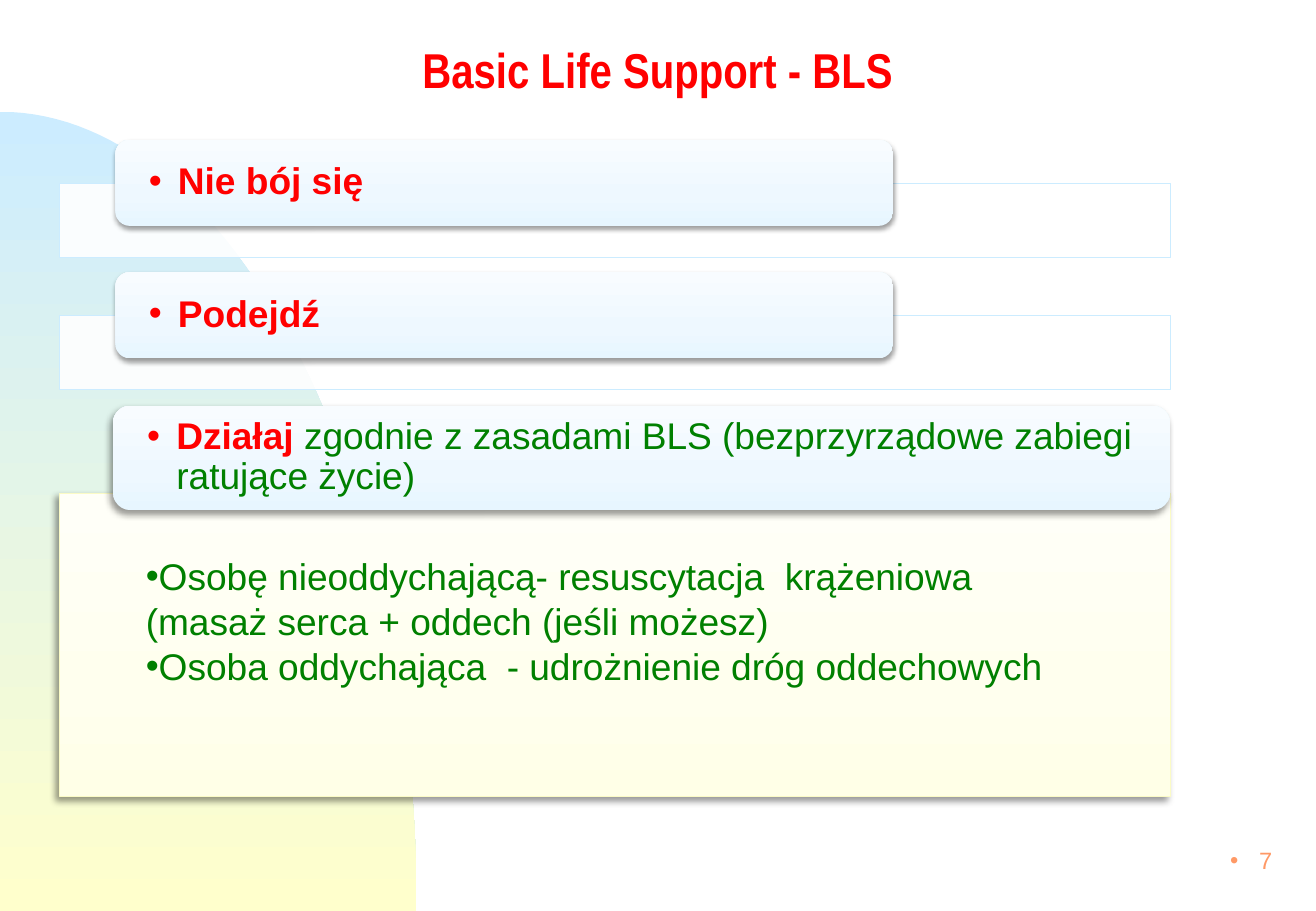
from dataclasses import dataclass

from pptx import Presentation
from pptx.dml.color import RGBColor
from pptx.enum.shapes import MSO_SHAPE as Shape
from pptx.enum.text import MSO_ANCHOR as Anchor, MSO_AUTO_SIZE as AutoSize, PP_ALIGN as Align
from pptx.oxml import parse_xml
from pptx.oxml.ns import nsdecls
from pptx.util import Inches, Pt


@dataclass(frozen=True)
class Theme:
    font: str = "Arial"
    title_font: str = "Arial Narrow"
    title_size: int = 29
    text_size: int = 22
    number_size: int = 14
    red: str = "FF0000"
    green: str = "008000"
    orange: str = "FF9966"
    white: str = "FFFFFF"
    sky: str = "CCECFF"
    panel_line: str = "FBFBC6"
    # Gradients: (position in percent, colour)
    arc_stops: tuple = ((0, "CCECFF"), (100, "FFFFCC"))
    card_stops: tuple = ((0, "E7F6FF"), (35, "EEF8FF"), (100, "F8FCFF"))
    panel_stops: tuple = ((0, "FFFFE7"), (35, "FFFFEE"), (100, "FFFFF8"))
    # Shadows: opacity in percent, blur, distance, angle
    soft_shadow: tuple = (38, 3.1, 1.6, 90)
    deep_shadow: tuple = (40, 4, 3, 135)


class SlideBuilder:
    def __init__(self, page, theme):
        self.page = page
        self.theme = theme

    # Styling
    def gradient(self, shape, stops, angle):
        shape.fill.solid()
        solid = shape._element.spPr.find("{*}solidFill")
        marks = "".join(f'<a:gs pos="{pos * 1000}"><a:srgbClr val="{color}"/></a:gs>'
                        for pos, color in stops)
        solid.getparent().replace(solid, parse_xml(
            f'<a:gradFill {nsdecls("a")} rotWithShape="1"><a:gsLst>{marks}</a:gsLst>'
            f'<a:lin ang="{angle * 60000}" scaled="0"/></a:gradFill>'))

    def outline(self, shape, color):
        shape.line.color.rgb = RGBColor.from_string(color)
        shape.line.width = Pt(0.75)

    def shadow(self, shape, opacity, blur, distance, angle):
        shape.shadow.inherit = False
        shape._element.spPr.find("{*}effectLst").append(parse_xml(
            f'<a:outerShdw {nsdecls("a")} blurRad="{Pt(blur)}" dist="{Pt(distance)}" '
            f'dir="{angle * 60000}" rotWithShape="0"><a:srgbClr val="000000">'
            f'<a:alpha val="{opacity * 1000}"/></a:srgbClr></a:outerShdw>'))

    def place(self, shape, left, top, width, height):
        shape.left, shape.top = Inches(left), Inches(top)
        shape.width, shape.height = Inches(width), Inches(height)

    # Text
    def frame(self, shape, margins, anchor):
        frame = shape.text_frame
        frame.auto_size = AutoSize.NONE
        frame.word_wrap = True
        frame.vertical_anchor = anchor
        (frame.margin_left, frame.margin_top,
         frame.margin_right, frame.margin_bottom) = map(Inches, margins)
        return frame

    def add_spans(self, para, spans, size, align=Align.LEFT, spacing=1.0, font=None):
        para.alignment = align
        para.line_spacing = spacing
        para.space_before = para.space_after = Pt(0)
        for text, color, bold in spans:
            span = para.add_run()
            span.text = text
            span.font.name = font or self.theme.font
            span.font.size = Pt(size)
            span.font.bold = bold
            span.font.color.rgb = RGBColor.from_string(color)

    def bullet(self, para, hang=0.0):
        props = para._p.get_or_add_pPr()
        props.set("marL", str(Inches(hang)))
        props.set("indent", str(-Inches(hang)))
        props.append(parse_xml(f'<a:buFont {nsdecls("a")} typeface="{self.theme.font}"/>'))
        props.append(parse_xml(f'<a:buChar {nsdecls("a")} char="•"/>'))

    # Elements
    def arc(self, left, top, width, height, steps=60):
        """Fill the area under a cubic curve from top left to bottom right."""
        def point(t):
            rest = 1 - t
            x = 3 * rest ** 2 * t * 0.55 + 3 * rest * t ** 2 + t ** 3
            y = 3 * rest * t ** 2 * 0.45 + t ** 3
            return Inches(left + width * x), Inches(top + height * y)

        points = [point(step / steps) for step in range(steps + 1)]
        points.append((Inches(left), Inches(top + height)))
        builder = self.page.shapes.build_freeform(*points[0])
        builder.add_line_segments(points[1:], close=True)
        shape = builder.convert_to_shape()
        self.gradient(shape, self.theme.arc_stops, 90)
        shape.line.fill.background()
        shape.shadow.inherit = False

    def title(self, text, *area):
        box = self.page.shapes.title
        self.place(box, *area)
        frame = self.frame(box, (0.1, 0.05, 0.1, 0.05), Anchor.MIDDLE)
        self.add_spans(frame.paragraphs[0], [(text, self.theme.red, True)],
                       self.theme.title_size, Align.CENTER, 0.7, self.theme.title_font)

    def strip(self, *area):
        box = self.page.shapes.add_shape(Shape.RECTANGLE, *map(Inches, area))
        box.fill.solid()
        box.fill.fore_color.rgb = RGBColor.from_string(self.theme.white)
        color = box._element.spPr.find("{*}solidFill")[0]
        color.append(parse_xml(f'<a:alpha {nsdecls("a")} val="90000"/>'))
        self.outline(box, self.theme.sky)
        box.shadow.inherit = False

    def card(self, spans, shadow, *area):
        box = self.page.shapes.add_shape(Shape.ROUNDED_RECTANGLE, *map(Inches, area))
        self.gradient(box, self.theme.card_stops, 270)
        box.line.fill.background()
        self.shadow(box, *shadow)
        para = self.frame(box, (0.24, 0, 0.24, 0), Anchor.MIDDLE).paragraphs[0]
        self.add_spans(para, spans, self.theme.text_size, spacing=0.9)
        self.bullet(para, 0.24)

    def panel(self, items, *area):
        box = self.page.placeholders[1]
        self.page.shapes._spTree.append(box._element)  # bring to the front
        self.place(box, *area)
        self.gradient(box, self.theme.panel_stops, 270)
        self.outline(box, self.theme.panel_line)
        self.shadow(box, *self.theme.deep_shadow)
        frame = self.frame(box, (0.71, 0.5, 0.71, 0.17), Anchor.TOP)
        for index, item in enumerate(items):
            para = frame.add_paragraph() if index else frame.paragraphs[0]
            self.add_spans(para, [(item, self.theme.green, False)], self.theme.text_size)
            self.bullet(para)

    def page_number(self, text, *area):
        box = self.page.shapes.add_textbox(*map(Inches, area))
        para = self.frame(box, (0.1, 0.05, 0.1, 0.05), Anchor.MIDDLE).paragraphs[0]
        self.add_spans(para, [(text, self.theme.orange, False)],
                       self.theme.number_size, Align.RIGHT)
        self.bullet(para, 0.24)


def main():
    deck = Presentation()
    deck.slide_width, deck.slide_height = Inches(10.83), Inches(7.5)
    theme = Theme()
    slide = SlideBuilder(deck.slides.add_slide(deck.slide_layouts[1]), theme)

    # Background and title
    slide.arc(0, 0.92, 3.43, 6.58)
    slide.title("Basic Life Support - BLS", 0.54, 0, 9.75, 1.25)

    # Short steps
    for row, step in enumerate(("Nie bój się", "Podejdź")):
        top = 1.15 + row * 1.09
        slide.strip(0.49, top + 0.36, 9.14, 0.61)
        slide.card([(step, theme.red, True)], theme.soft_shadow, 0.95, top, 6.4, 0.71)

    # Final step with its details
    slide.panel(("Osobę nieoddychającą- resuscytacja  krążeniowa "
                 "(masaż serca + oddech (jeśli możesz)",
                 "Osoba oddychająca  - udrożnienie dróg oddechowych"),
                0.49, 4.06, 9.14, 2.5)
    slide.card([("Działaj ", theme.red, True),
                ("zgodnie z zasadami BLS (bezprzyrządowe zabiegi ratujące życie)",
                 theme.green, False)],
               theme.deep_shadow, 0.93, 3.34, 8.7, 0.86)

    # Page number
    slide.page_number("7", 8.31, 6.83, 2.26, 0.5)
    deck.save("out.pptx")


if __name__ == "__main__":
    main()
